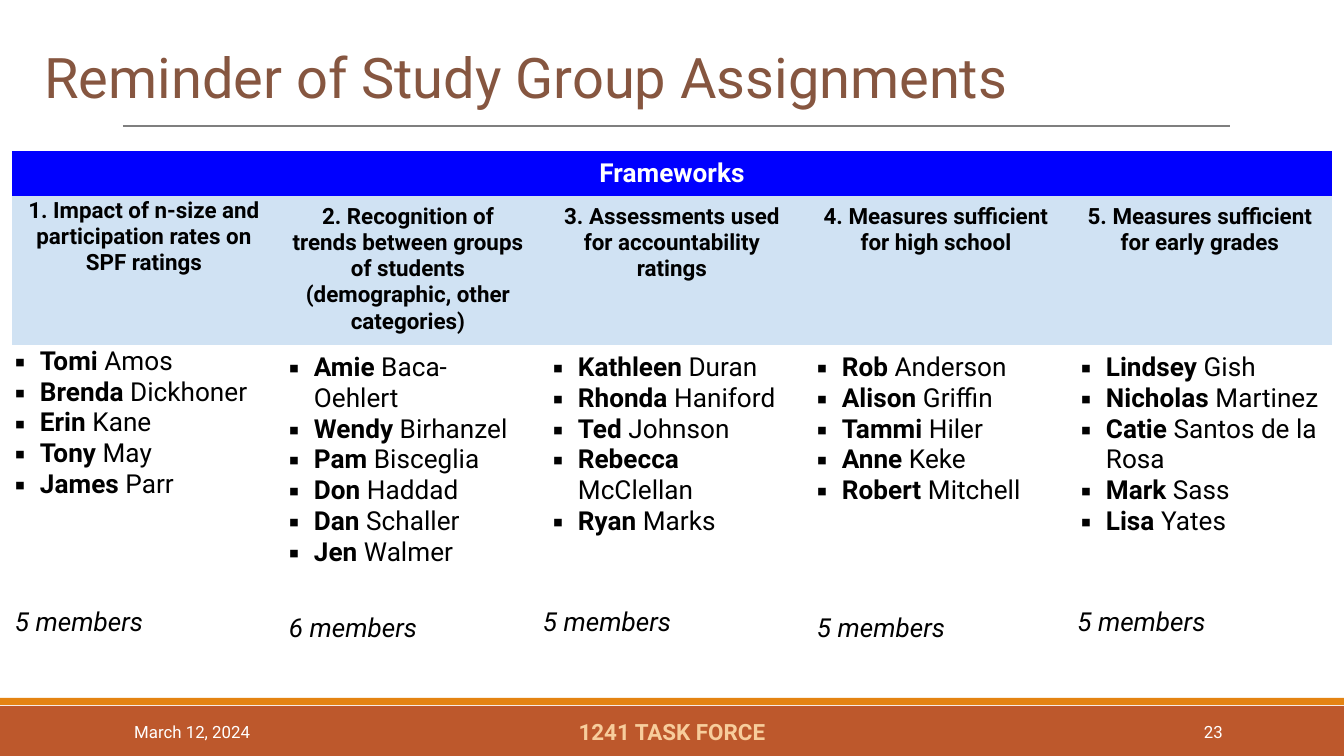
from dataclasses import dataclass

import pptx
import pptx.dml.color
import pptx.enum.shapes
import pptx.enum.text
import pptx.oxml
import pptx.oxml.ns
import pptx.util

EMU_PER_PX = 914400 / 134.4
ALIGN = pptx.enum.text.PP_ALIGN
ANCHOR = pptx.enum.text.MSO_ANCHOR
NO_GRID_STYLE = "{2D5ABB26-0587-4C30-8999-92F81FD0307C}"


@dataclass(frozen=True)
class Theme:
    font: str = "Roboto"
    title: str = "865640"
    rule: str = "7F7F7F"
    footer: str = "BD582C"
    footer_edge: str = "E48312"
    footer_name: str = "F7CD9C"
    header: str = "0000FF"
    topic: str = "D0E2F3"
    white: str = "FFFFFF"
    black: str = "000000"
    title_size: int = 30
    body_size: int = 14
    topic_size: int = 12
    small_size: int = 9


@dataclass(frozen=True)
class Box:
    x: int
    y: int
    w: int
    h: int

    def emu(self) -> tuple:
        return tuple(px(v) for v in (self.x, self.y, self.w, self.h))


@dataclass(frozen=True)
class Footer:
    text: str
    box: Box
    size: int
    color: str
    align: ALIGN
    bold: bool = False


@dataclass(frozen=True)
class Group:
    topic: str
    members: tuple  # (first name, last name)
    count: str
    tight: bool = False  # narrow margins around topic and members
    tight_count: bool = False


T = Theme()

GROUPS = (
    Group("1. Impact of n-size and participation rates on SPF ratings",
          (("Tomi", "Amos"), ("Brenda", "Dickhoner"), ("Erin", "Kane"),
           ("Tony", "May"), ("James", "Parr")),
          "5 members", tight=True, tight_count=True),
    Group("2. Recognition of trends between groups of students "
          "(demographic, other categories)",
          (("Amie", "Baca-Oehlert"), ("Wendy", "Birhanzel"), ("Pam", "Bisceglia"),
           ("Don", "Haddad"), ("Dan", "Schaller"), ("Jen", "Walmer")),
          "6 members"),
    Group("3. Assessments used for accountability ratings",
          (("Kathleen", "Duran"), ("Rhonda", "Haniford"), ("Ted", "Johnson"),
           ("Rebecca", "McClellan"), ("Ryan", "Marks")),
          "5 members", tight_count=True),
    Group("4. Measures sufficient for high school",
          (("Rob", "Anderson"), ("Alison", "Griffin"), ("Tammi", "Hiler"),
           ("Anne", "Keke"), ("Robert", "Mitchell")),
          "5 members"),
    Group("5. Measures sufficient for early grades",
          (("Lindsey", "Gish"), ("Nicholas", "Martinez"),
           ("Catie", "Santos de la Rosa"), ("Mark", "Sass"), ("Lisa", "Yates")),
          " 5 members", tight_count=True),
)

FOOTERS = (
    Footer("March 12, 2024", Box(121, 712, 273, 40), T.small_size, T.white, ALIGN.LEFT),
    Footer("1241 TASK FORCE", Box(406, 712, 532, 40), T.topic_size, T.footer_name,
           ALIGN.CENTER, bold=True),
    Footer("23", Box(1091, 712, 145, 40), T.small_size, T.white, ALIGN.RIGHT),
)


def px(n: int) -> pptx.util.Emu:
    return pptx.util.Emu(round(n * EMU_PER_PX))


def rgb(color: str) -> pptx.dml.color.RGBColor:
    return pptx.dml.color.RGBColor.from_string(color)


def add_text(p, text: str, *, size: int, color: str = T.black, bold: bool = False,
             italic: bool = False, align: ALIGN = ALIGN.LEFT) -> None:
    p.alignment = align
    r = p.add_run()
    r.text = text
    r.font.name = T.font
    r.font.size = pptx.util.Pt(size)
    r.font.bold = bold
    r.font.italic = italic
    r.font.color.rgb = rgb(color)


def add_bullet(p) -> None:
    pPr = p._p.get_or_add_pPr()
    pPr.set("marL", str(px(25)))
    pPr.set("indent", str(-px(25)))
    ns = pptx.oxml.ns.nsdecls("a")
    for xml in (f'<a:buClr {ns}><a:srgbClr val="{T.black}"/></a:buClr>',
                f'<a:buFont {ns} typeface="{T.font}"/>',
                f'<a:buChar {ns} char="▪"/>'):
        pPr.append(pptx.oxml.parse_xml(xml))


def add_bar(s, box: Box, color: str) -> None:
    sp = s.shapes.add_shape(pptx.enum.shapes.MSO_SHAPE.RECTANGLE, *box.emu())
    sp.shadow.inherit = False
    sp.fill.solid()
    sp.fill.fore_color.rgb = rgb(color)
    sp.line.fill.background()


def add_rule(s, x1: int, x2: int, y: int) -> None:
    line = s.shapes.add_connector(pptx.enum.shapes.MSO_CONNECTOR.STRAIGHT,
                                  px(x1), px(y), px(x2), px(y))
    line.line.color.rgb = rgb(T.rule)
    line.line.width = pptx.util.Pt(0.75)
    ns = pptx.oxml.ns.nsdecls("a")
    line._element.spPr.append(pptx.oxml.parse_xml(f"<a:effectLst {ns}/>"))


def add_footer(s, footer: Footer) -> None:
    tf = s.shapes.add_textbox(*footer.box.emu()).text_frame
    tf.word_wrap = True
    tf.vertical_anchor = ANCHOR.MIDDLE
    add_text(tf.paragraphs[0], footer.text, size=footer.size, color=footer.color,
             bold=footer.bold, align=footer.align)


def format_cell(cell, fill: str, tight: bool = False):
    """Fill the cell, set its margins and return its text frame."""
    cell.fill.solid()
    cell.fill.fore_color.rgb = rgb(fill)
    cell.margin_left = cell.margin_right = px(3 if tight else 13)
    cell.margin_top = cell.margin_bottom = px(1 if tight else 7)
    return cell.text_frame


def add_groups(s, box: Box, row_heights: tuple, groups: tuple) -> None:
    table = s.shapes.add_table(len(row_heights), len(groups), *box.emu()).table
    table._tbl.tblPr.find(pptx.oxml.ns.qn("a:tableStyleId")).text = NO_GRID_STYLE
    table.first_row = table.horz_banding = False
    for row, height in zip(table.rows, row_heights):
        row.height = px(height)

    # Header across all columns
    table.cell(0, 0).merge(table.cell(0, len(groups) - 1))
    tf = format_cell(table.cell(0, 0), T.header)
    add_text(tf.paragraphs[0], "Frameworks", size=T.body_size, color=T.white,
             bold=True, align=ALIGN.CENTER)

    # One column for each study group
    for i, group in enumerate(groups):
        table.columns[i].width = px(box.w // len(groups))
        tf = format_cell(table.cell(1, i), T.topic, group.tight)
        add_text(tf.paragraphs[0], group.topic, size=T.topic_size, bold=True,
                 align=ALIGN.CENTER)
        tf = format_cell(table.cell(2, i), T.white, group.tight)
        for j, (first, last) in enumerate(group.members):
            p = tf.add_paragraph() if j else tf.paragraphs[0]
            add_bullet(p)
            add_text(p, first, size=T.body_size, bold=True)
            add_text(p, f" {last}", size=T.body_size)
        tf = format_cell(table.cell(3, i), T.white, group.tight_count)
        add_text(tf.paragraphs[0], group.count, size=T.body_size, italic=True)


def main() -> None:
    prs = pptx.Presentation()
    prs.slide_width, prs.slide_height = px(1344), px(756)
    s = prs.slides.add_slide(prs.slide_layouts[5])

    # Footer band and rule under the title
    add_bar(s, Box(0, 706, 1344, 50), T.footer)
    add_bar(s, Box(0, 698, 1344, 7), T.footer_edge)
    add_rule(s, 123, 1230, 126)

    # Title
    title = s.shapes.title
    title.left, title.top, title.width, title.height = Box(31, 32, 1199, 85).emu()
    tf = title.text_frame
    tf.auto_size = pptx.enum.text.MSO_AUTO_SIZE.NONE
    tf.vertical_anchor = ANCHOR.BOTTOM
    tf.paragraphs[0].line_spacing = 0.85
    add_text(tf.paragraphs[0], "Reminder of Study Group Assignments",
             size=T.title_size, color=T.title)

    # Footer texts and assignments table
    for footer in FOOTERS:
        add_footer(s, footer)
    add_groups(s, Box(12, 151, 1320, 527), (45, 144, 261, 77), GROUPS)

    prs.save("out.pptx")


if __name__ == "__main__":
    main()
